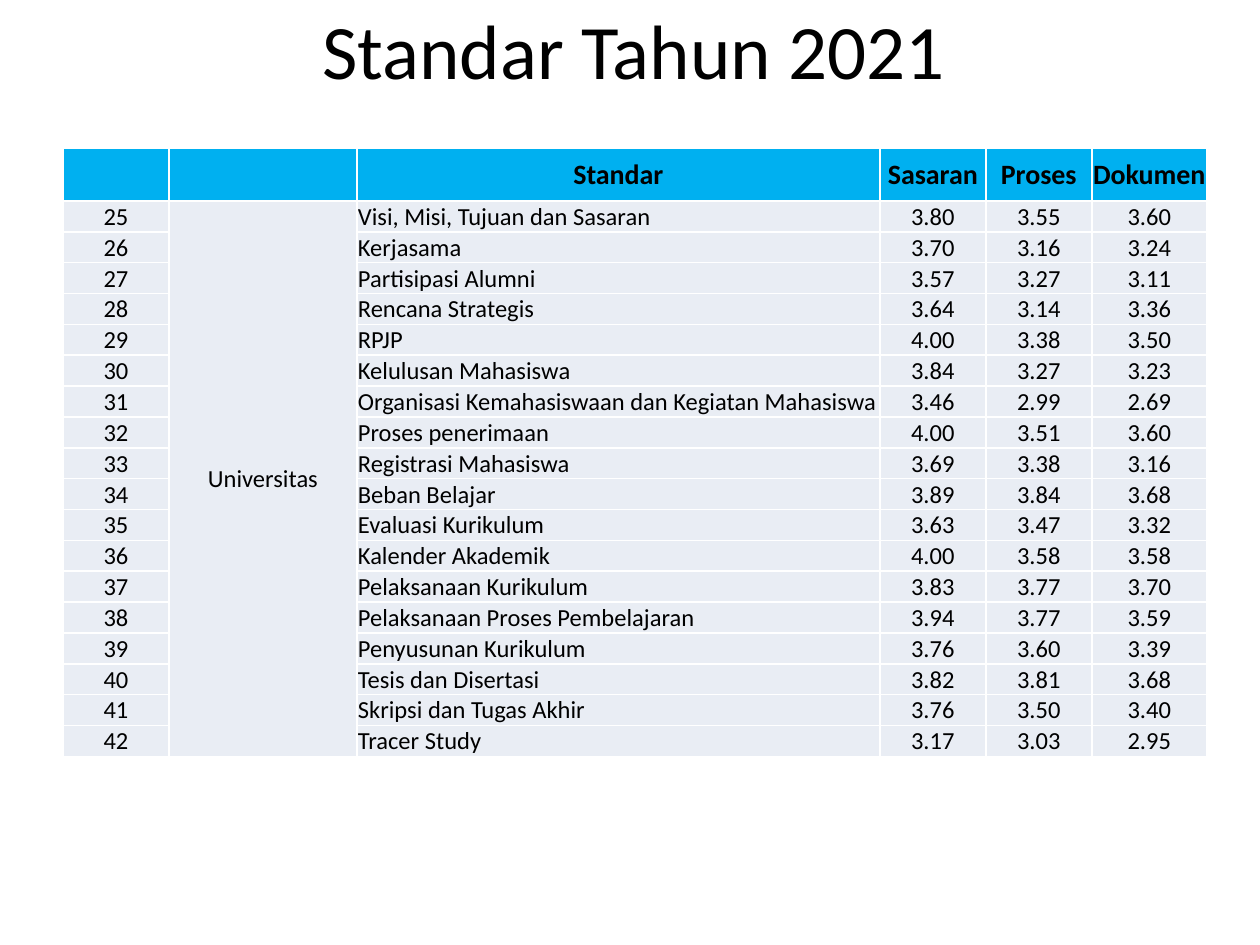
from lxml import etree
from pptx import Presentation
from pptx.dml.color import RGBColor
from pptx.enum.text import MSO_ANCHOR, PP_ALIGN
from pptx.oxml.ns import qn
from pptx.util import Pt

PX = 914400 // 126
FONT = "Calibri"
BLACK = RGBColor(0x00, 0x00, 0x00)
HEADER_BLUE = RGBColor(0x00, 0xB0, 0xF0)
BODY_GREY = RGBColor(0xE9, 0xED, 0xF4)
BORDER_WHITE = RGBColor(0xFF, 0xFF, 0xFF)
CENTER, LEFT = PP_ALIGN.CENTER, PP_ALIGN.LEFT
MIDDLE, BOTTOM = MSO_ANCHOR.MIDDLE, MSO_ANCHOR.BOTTOM

FIRST_NUMBER = 25
GROUP_COLUMN, STANDARD_COLUMN = 1, 2
COLUMN_WIDTHS = [106, 188, 523, 106, 106, 115]
HEADER_HEIGHT, ROW_HEIGHT = 53, 25
HEADINGS = ["", "", "Standar", "Sasaran", "Proses", "Dokumen"]
STANDARDS = [
    ("Visi, Misi, Tujuan dan Sasaran", "3.80", "3.55", "3.60"),
    ("Kerjasama", "3.70", "3.16", "3.24"),
    ("Partisipasi Alumni", "3.57", "3.27", "3.11"),
    ("Rencana Strategis", "3.64", "3.14", "3.36"),
    ("RPJP", "4.00", "3.38", "3.50"),
    ("Kelulusan Mahasiswa", "3.84", "3.27", "3.23"),
    ("Organisasi Kemahasiswaan dan Kegiatan Mahasiswa", "3.46", "2.99", "2.69"),
    ("Proses penerimaan", "4.00", "3.51", "3.60"),
    ("Registrasi Mahasiswa", "3.69", "3.38", "3.16"),
    ("Beban Belajar", "3.89", "3.84", "3.68"),
    ("Evaluasi Kurikulum", "3.63", "3.47", "3.32"),
    ("Kalender Akademik", "4.00", "3.58", "3.58"),
    ("Pelaksanaan Kurikulum", "3.83", "3.77", "3.70"),
    ("Pelaksanaan Proses Pembelajaran", "3.94", "3.77", "3.59"),
    ("Penyusunan Kurikulum", "3.76", "3.60", "3.39"),
    ("Tesis dan Disertasi", "3.82", "3.81", "3.68"),
    ("Skripsi dan Tugas Akhir", "3.76", "3.50", "3.40"),
    ("Tracer Study", "3.17", "3.03", "2.95"),
]


def add_borders(cell):
    properties = cell._tc.get_or_add_tcPr()
    for side in ("lnL", "lnR", "lnT", "lnB"):
        line = etree.SubElement(properties, qn(f"a:{side}"), w=str(Pt(1)))
        fill = etree.SubElement(line, qn("a:solidFill"))
        etree.SubElement(fill, qn("a:srgbClr"), val=str(BORDER_WHITE))


def format_text(paragraph, size, bold, alignment):
    paragraph.alignment = alignment
    paragraph.font.name = FONT
    paragraph.font.size = Pt(size)
    paragraph.font.bold = bold
    paragraph.font.color.rgb = BLACK


presentation = Presentation()
presentation.slide_width = 1260 * PX
presentation.slide_height = 945 * PX
slide = presentation.slides.add_slide(presentation.slide_layouts[5])

title = slide.shapes.title
title.left, title.top, title.width, title.height = 67 * PX, 0, 1134 * PX, 98 * PX
title.text_frame.text = "Standar Tahun 2021"
title.text_frame.vertical_anchor = MIDDLE
format_text(title.text_frame.paragraphs[0], 44, False, CENTER)

rows = [HEADINGS]
for number, (standard, *scores) in enumerate(STANDARDS, FIRST_NUMBER):
    group = "Universitas" if number == FIRST_NUMBER else ""
    rows.append([str(number), group, standard, *scores])

table = slide.shapes.add_table(
    len(rows), len(HEADINGS), 63 * PX, 148 * PX, sum(COLUMN_WIDTHS) * PX, 595 * PX
).table
table.first_row = False
table.horz_banding = False
for column, width in zip(table.columns, COLUMN_WIDTHS):
    column.width = width * PX

for row_index, values in enumerate(rows):
    is_header = row_index == 0
    table.rows[row_index].height = (HEADER_HEIGHT if is_header else ROW_HEIGHT) * PX
    for column_index, value in enumerate(values):
        is_standard = column_index == STANDARD_COLUMN and not is_header
        cell = table.cell(row_index, column_index)
        add_borders(cell)
        cell.fill.solid()
        cell.fill.fore_color.rgb = HEADER_BLUE if is_header else BODY_GREY
        cell.margin_left = cell.margin_right = cell.margin_top = PX
        cell.margin_bottom = 0
        cell.vertical_anchor = BOTTOM if is_standard else MIDDLE
        cell.text = value
        format_text(
            cell.text_frame.paragraphs[0],
            16 if is_header else 14,
            is_header,
            LEFT if is_standard else CENTER,
        )

table.cell(1, GROUP_COLUMN).merge(table.cell(len(STANDARDS), GROUP_COLUMN))

presentation.save("out.pptx")
